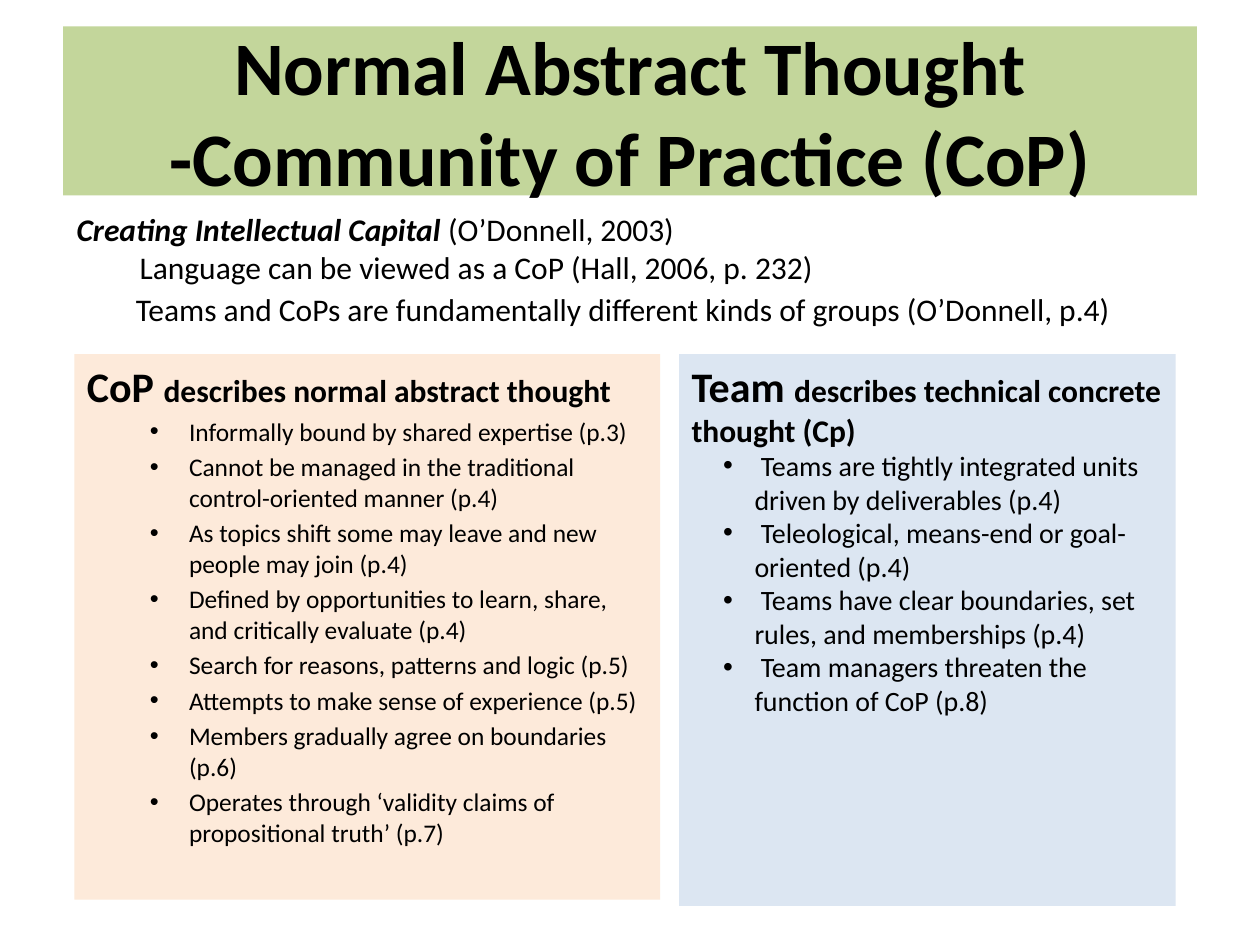
"""Build the slide comparing communities of practice with teams."""
from lxml import etree
from pptx import Presentation
from pptx.dml.color import RGBColor
from pptx.enum.shapes import MSO_SHAPE
from pptx.enum.text import MSO_ANCHOR, MSO_AUTO_SIZE, PP_ALIGN
from pptx.oxml.ns import qn
from pptx.util import Inches, Pt

RECTANGLE = MSO_SHAPE.RECTANGLE
TOP, MIDDLE = MSO_ANCHOR.TOP, MSO_ANCHOR.MIDDLE
LEFT, CENTER = PP_ALIGN.LEFT, PP_ALIGN.CENTER
NO_AUTOFIT = MSO_AUTO_SIZE.NONE

TITLE = "Normal Abstract Thought -Community of Practice (CoP)"
SOURCE = ("Creating Intellectual Capital ", "(O’Donnell, 2003)")
LANGUAGE = "Language can be viewed as a CoP (Hall, 2006, p. 232)"
GROUPS = "Teams and CoPs are fundamentally different kinds of groups (O’Donnell, p.4)"
COP_HEADING = ("CoP ", "describes normal abstract thought")
COP_POINTS = [
    "Informally bound by shared expertise (p.3)",
    "Cannot be managed in the traditional control-oriented manner (p.4)",
    "As topics shift some may leave and new people may join (p.4)",
    "Defined by opportunities to learn, share, and critically evaluate (p.4)",
    "Search for reasons, patterns and logic (p.5)",
    "Attempts to make sense of experience (p.5)",
    "Members gradually agree on boundaries (p.6)",
    "Operates through ‘validity claims of propositional truth’ (p.7)",
]
TEAM_HEADING = ("Team ", "describes technical concrete thought (Cp)")
TEAM_POINTS = [
    " Teams are tightly integrated units driven by deliverables (p.4)",
    " Teleological, means-end or goal-oriented (p.4)",
    " Teams have clear boundaries, set rules, and memberships (p.4)",
    " Team managers threaten the function of CoP (p.8)",
]

LARGE = {"size": Pt(24), "bold": True}
STRONG = {"size": Pt(18), "bold": True}
PLAIN = {"size": Pt(18), "bold": False}
EMPHASIS = {**STRONG, "italic": True}


def color(value):
    """Turn a hex string into a colour."""
    return RGBColor.from_string(value)


def prepare(box, area, fill=None, anchor=TOP):
    """Place a box, fill it and set up its text frame."""
    for name, value in zip(("left", "top", "width", "height"), area):
        setattr(box, name, Inches(value))
    if fill:
        box.fill.solid()
        box.fill.fore_color.rgb = color(fill)
        box.line.fill.background()
    frame = box.text_frame
    settings = {"word_wrap": True, "auto_size": NO_AUTOFIT, "vertical_anchor": anchor}
    for name, value in settings.items():
        setattr(frame, name, value)
    return frame


def write(frame, spans, level=0, margin=0, indent=0, bullet=None, before=0, align=LEFT):
    """Add a paragraph made of (text, format) spans."""
    first = frame.paragraphs[0]
    para = frame.add_paragraph() if first.runs else first
    para.level, para.alignment, para.space_before = level, align, Pt(before)
    properties = para._p.get_or_add_pPr()
    properties.set("marL", str(Inches(margin)))
    properties.set("indent", str(Inches(indent)))
    if bullet:
        etree.SubElement(properties, qn("a:buFont")).set("typeface", "Arial")
        etree.SubElement(properties, qn("a:buChar")).set("char", bullet)
    else:
        etree.SubElement(properties, qn("a:buNone"))
    for text, style in spans:
        span = para.add_run()
        span.text = text
        for name, value in {"name": "Calibri", **style}.items():
            setattr(span.font, name, value)
        span.font.color.rgb = color("000000")


def write_panel(frame, heading, points, size, heading_layout, point_layout):
    """Write a heading followed by bulleted points."""
    write(frame, zip(heading, (LARGE, STRONG)), **heading_layout)
    for point in points:
        write(frame, [(point, {"size": Pt(size), "bold": False})],
              level=1, bullet="•", **point_layout)


def main():
    """Assemble and save the deck."""
    deck = Presentation()
    deck.slide_width, deck.slide_height = Inches(10), Inches(7.5)
    page = deck.slides.add_slide(deck.slide_layouts[1])
    title, body = page.placeholders

    frame = prepare(title, (0.5, 0.21, 9, 1.34), "C3D69B", MIDDLE)
    write(frame, [(TITLE, {"size": Pt(43.2), "bold": True})], align=CENTER)

    frame = prepare(body, (0.59, 2.81, 4.65, 4.33), "FDEADA")
    write_panel(frame, COP_HEADING, COP_POINTS, 14.5,
                {"margin": 0.38, "indent": -0.38, "before": 4.8},
                {"margin": 0.81, "indent": -0.31, "before": 2.9})

    team = page.shapes.add_shape(RECTANGLE, 0, 0, 0, 0)
    team.shadow.inherit = False
    frame = prepare(team, (5.39, 2.81, 3.94, 4.38), "DCE6F2")
    write_panel(frame, TEAM_HEADING, TEAM_POINTS, 16, {},
                {"margin": 0.5, "indent": -0.25})

    frame = prepare(page.shapes.add_textbox(0, 0, 0, 0), (0.51, 1.62, 8.98, 1.31))
    write(frame, zip(SOURCE, (EMPHASIS, PLAIN)))
    write(frame, [(LANGUAGE, PLAIN)], level=1, margin=0.5)

    frame = prepare(page.shapes.add_textbox(0, 0, 0, 0), (0.98, 2.25, 8.35, 0.4))
    write(frame, [(GROUPS, PLAIN)])

    deck.save("out.pptx")


if __name__ == "__main__":
    main()
